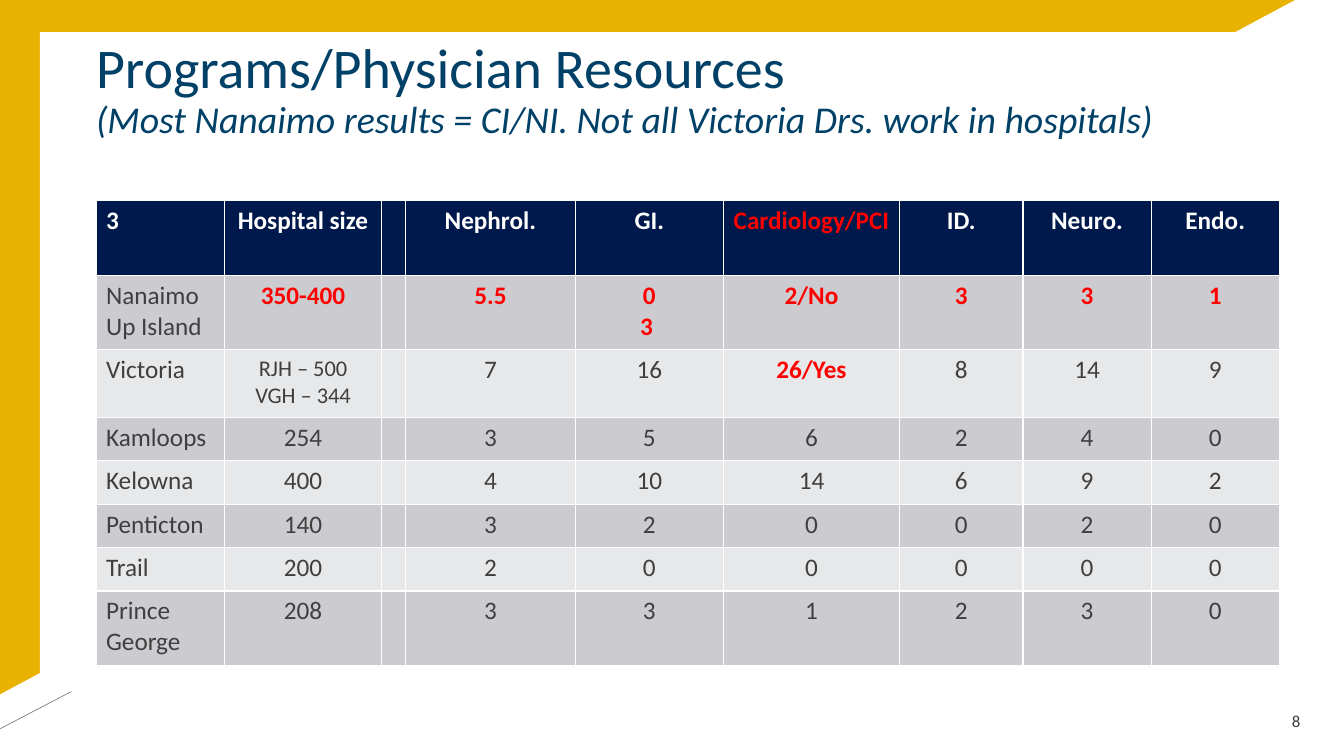
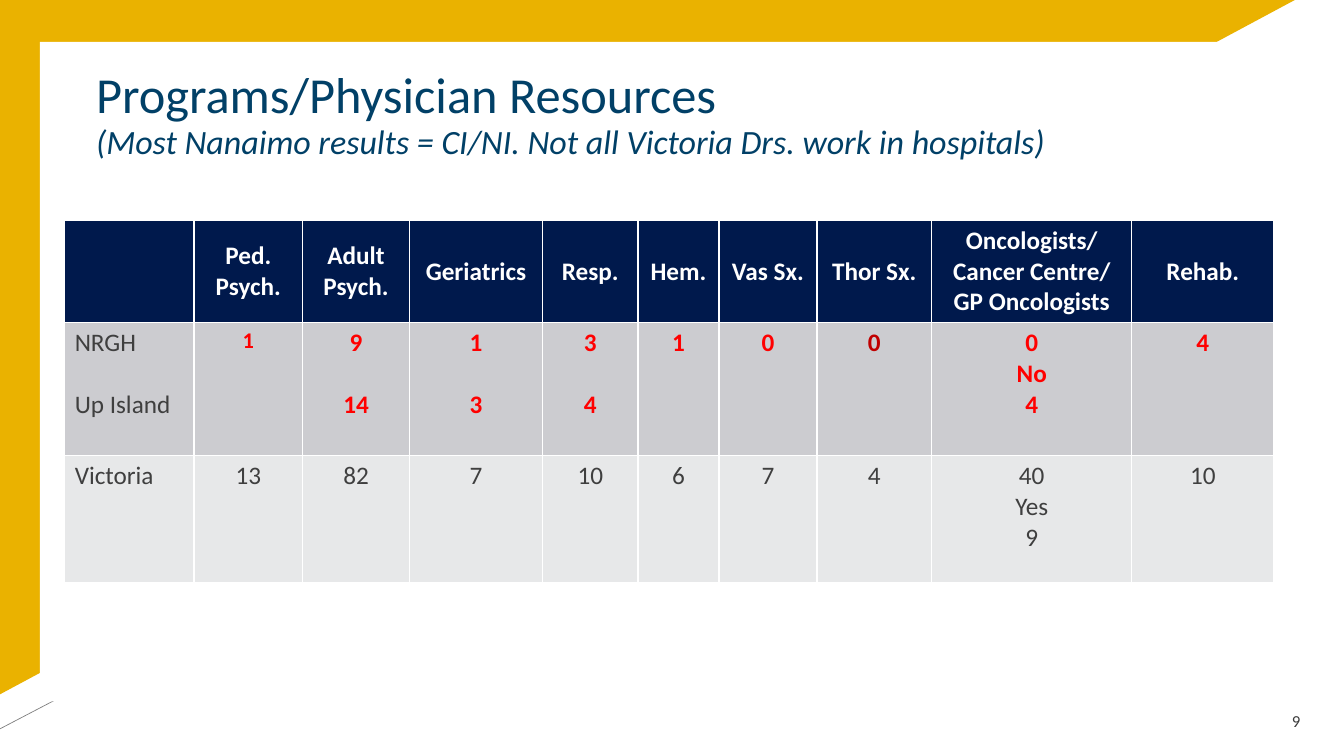
from lxml.etree import SubElement
from pptx import Presentation
from pptx.dml.color import RGBColor
from pptx.enum.shapes import MSO_CONNECTOR as Connector, MSO_SHAPE as Preset
from pptx.enum.text import MSO_ANCHOR as Anchor, MSO_AUTO_SIZE as AutoSize, PP_ALIGN as Align
from pptx.oxml.ns import qn
from pptx.util import Pt

COLORS = {
    "gold": "EAB200", "white": "FFFFFF", "rule": "808080", "title": "014067",
    "header": "00194C", "odd": "CCCCD0", "even": "E7E8E9", "body": "3F3F3F",
    "red": "FF0000", "dark red": "C00000", "number": "3C3C3C",
}
TITLE = "Programs/Physician Resources"
SUBTITLE = "(Most Nanaimo results = CI/NI. Not all Victoria Drs. work in hospitals)"

# Cell positions are (row, column); "gaps" lists cells whose second paragraph is set apart.
PAGES = [
    {
        "number": "8", "panel_top": 23, "title_box": (46, 23, 837, 80), "title_sizes": (40, 27),
        "table_at": (68.6, 143.3), "header_anchor": Anchor.TOP,
        "widths": [92, 111.8, 16.8, 121.4, 105.7, 126, 88, 91.6, 91.6],
        "heights": [53.3, 53.3, 48.3, 31, 31, 31, 31, 53.3],
        "rows": [
            ["3", "Hospital size", "", "Nephrol.", "GI.", "Cardiology/PCI", "ID.", "Neuro.", "Endo."],
            ["Nanaimo\nUp Island", "350-400", "", "5.5", "0\n3 ", "2/No", "3", "3", "1"],
            ["Victoria", "RJH – 500\nVGH – 344", "", "7", "16", "26/Yes", "8", "14", "9"],
            ["Kamloops", "254", "", "3", "5", "6", "2", "4", "0"],
            ["Kelowna", "400", "", "4", "10", "14", "6", "9", "2"],
            ["Penticton", "140", "", "3", "2", "0", "0", "2", "0"],
            ["Trail", "200", "", "2", "0", "0", "0", "0", "0"],
            ["Prince George", "208", "", "3", "3", "1", "2", "3", "0"],
        ],
        "accents": {(0, 5): "red", (2, 5): "red"}, "small": (2, 1), "gaps": [],
    },
    {
        "number": "9", "panel_top": 30, "title_box": (46, 44, 837, 74), "title_sizes": (36, 24.3),
        "table_at": (46.2, 157.3), "header_anchor": Anchor.MIDDLE,
        "widths": [92.4, 77.6, 76.3, 95.2, 68.1, 57.8, 70, 82, 143, 101.4],
        "heights": [73, 95.2, 90.5],
        "rows": [
            ["", "Ped. Psych.", "Adult Psych.", "Geriatrics", "Resp.", "Hem.", "Vas Sx.", "Thor Sx.",
             "Oncologists/\nCancer Centre/\nGP Oncologists", "Rehab."],
            ["NRGH\nUp Island", "1", "9\n14", "1\n3", "3\n4", "1", "0", "0", "0\nNo\n4", "4"],
            ["Victoria", "13", "82", "7", "10", "6", "7", "4", "40\nYes\n9", "10"],
        ],
        "accents": {(1, 7): "dark red"}, "small": (1, 1), "gaps": [(1, 0), (1, 2), (1, 3), (1, 4)],
    },
]


def style(span, size, color, bold=False, italic=False):
    span.font.name = "Calibri"
    span.font.size = Pt(size)
    span.font.bold = bold
    span.font.italic = italic
    span.font.color.rgb = RGBColor.from_string(COLORS[color])


def add_block(page, preset, left, top, width, height, color):
    block = page.shapes.add_shape(preset, Pt(left), Pt(top), Pt(width), Pt(height))
    block.shadow.inherit = False
    block.fill.solid()
    block.fill.fore_color.rgb = RGBColor.from_string(COLORS[color])
    block.line.fill.background()
    return block


deck = Presentation()
deck.slide_width, deck.slide_height = Pt(960), Pt(540)

for plan in PAGES:
    page = deck.slides.add_slide(deck.slide_layouts[5])

    # Gold corner, thin rule and white panel
    corner = add_block(page, Preset.RIGHT_TRIANGLE, 0, 0, 925, 496, "gold")
    corner._element.spPr.xfrm.set("flipV", "1")
    rule = page.shapes.add_connector(Connector.STRAIGHT, Pt(0), Pt(520.6), Pt(186), Pt(423.4))
    rule.line.width = Pt(0.5)
    rule.line.color.rgb = RGBColor.from_string(COLORS["rule"])
    SubElement(rule._element.spPr, qn("a:effectLst"))
    add_block(page, Preset.RECTANGLE, 28.4, plan["panel_top"], 903.6, 471, "white")

    # Title, raised above the panel
    title = page.shapes.title
    page.shapes._spTree.append(title._element)
    title.left, title.top, title.width, title.height = map(Pt, plan["title_box"])
    frame = title.text_frame
    frame.text = f"{TITLE}\v{SUBTITLE}"
    frame.auto_size = AutoSize.NONE
    frame.word_wrap = True
    frame.vertical_anchor = Anchor.MIDDLE
    frame.margin_left, frame.margin_top, frame.margin_right, frame.margin_bottom = map(Pt, (22.6, 3.6, 7.2, 0))
    para = frame.paragraphs[0]
    para.alignment = Align.LEFT
    para.line_spacing = 0.9
    for span, size, italic in zip(para.runs, plan["title_sizes"], (False, True)):
        style(span, size, "title", italic=italic)

    # Table; the default table style supplies the white borders
    rows, widths, heights = plan["rows"], plan["widths"], plan["heights"]
    left, top = plan["table_at"]
    table = page.shapes.add_table(len(rows), len(widths), Pt(left), Pt(top),
                                  Pt(sum(widths)), Pt(sum(heights))).table
    for column, width in zip(table.columns, widths):
        column.width = Pt(width)
    for row, height in zip(table.rows, heights):
        row.height = Pt(height)

    for r, texts in enumerate(rows):
        band = "header" if r == 0 else "odd" if r % 2 else "even"
        for c, text in enumerate(texts):
            cell = table.cell(r, c)
            cell.text = text
            cell.fill.solid()
            cell.fill.fore_color.rgb = RGBColor.from_string(COLORS[band])
            cell.vertical_anchor = plan["header_anchor"] if r == 0 else Anchor.TOP
            usual = "white" if r == 0 else "red" if r == 1 and c > 0 else "body"
            color = plan["accents"].get((r, c), usual)
            size = 16 if (r, c) == plan["small"] else 18
            for para in cell.text_frame.paragraphs:
                para.alignment = Align.CENTER if c else Align.LEFT
                for span in para.runs:
                    style(span, size, color, bold=color != "body")
            if (r, c) in plan["gaps"]:
                cell.text_frame.paragraphs[1].space_before = Pt(22)

    # Page number
    box = page.shapes.add_textbox(Pt(877.7), Pt(500.4), Pt(58.3), Pt(28.8))
    box.text_frame.word_wrap = True
    box.text_frame.vertical_anchor = Anchor.MIDDLE
    box.text_frame.text = plan["number"]
    para = box.text_frame.paragraphs[0]
    para.alignment = Align.RIGHT
    style(para.runs[0], 12, "number")

deck.save("out.pptx")
